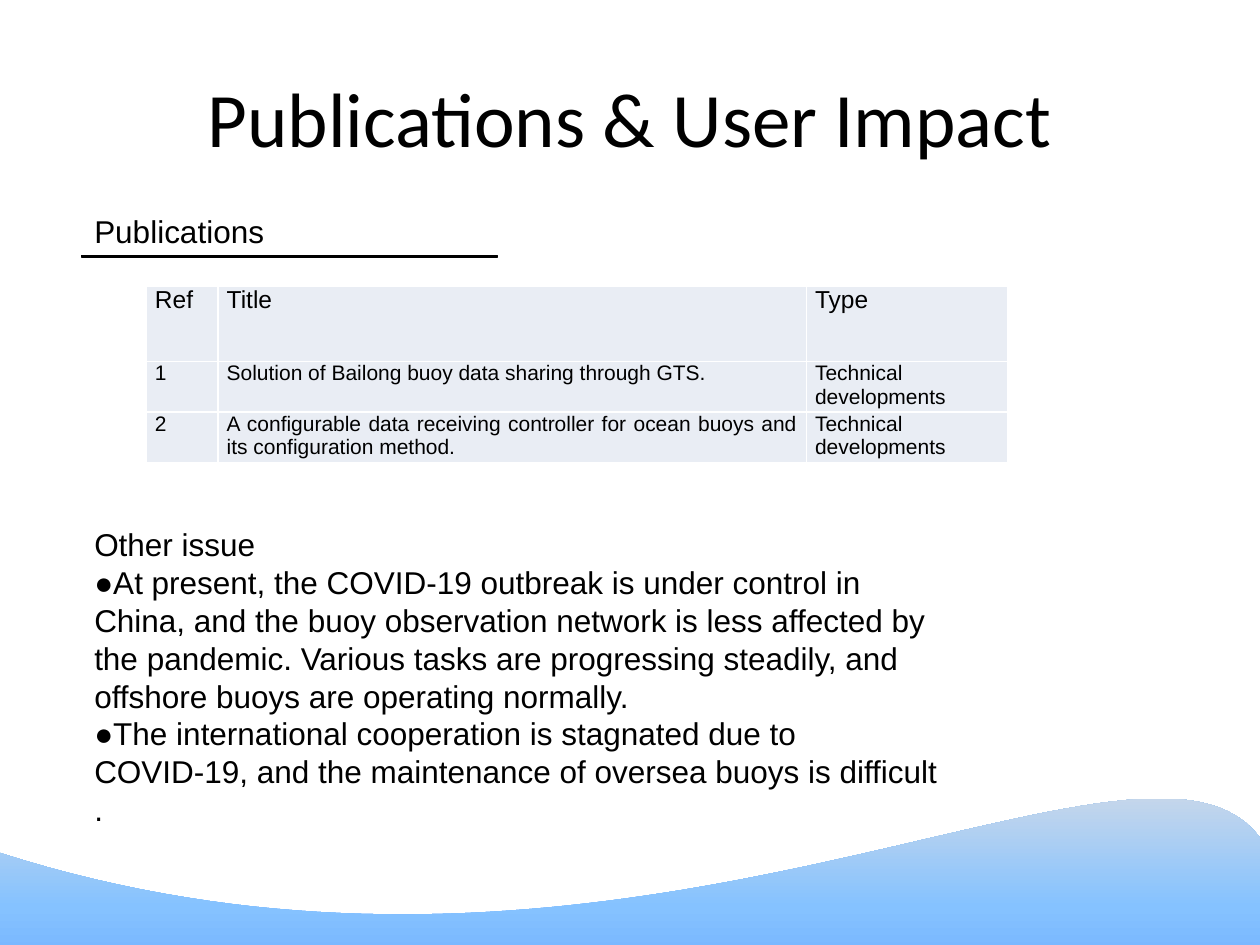
from copy import deepcopy

from lxml.etree import SubElement
from pptx import Presentation
from pptx.dml.color import RGBColor
from pptx.enum.shapes import MSO_SHAPE as Shape
from pptx.enum.text import MSO_ANCHOR as Anchor, PP_ALIGN as Align
from pptx.oxml.ns import qn
from pptx.util import Inches, Pt

BLACK = RGBColor(0x00, 0x00, 0x00)
WHITE = RGBColor(0xFF, 0xFF, 0xFF)
CELL_FILL = RGBColor(0xE9, 0xED, 0xF4)
WAVE_STOPS = [
    (0, RGBColor(0x7A, 0xB8, 0xFF)),
    (0.28, RGBColor(0x85, 0xC2, 0xFF)),
    (1, RGBColor(0xC4, 0xD6, 0xEB)),
]
WAVE_CURVE = [(0, 6.77), (5.01, 8.37), (9.09, 5.41), (10, 6.65)]
WAVE_BOTTOM = 7.53
WAVE_STEPS = 80

COLUMN_WIDTHS = [0.57, 4.67, 1.6]
ROW_HEIGHTS = [0.6, 0.37, 0.37]
PUBLICATIONS = [
    ("Ref", "Title", "Type"),
    ("1", "Solution of Bailong buoy data sharing through GTS.", "Technical developments"),
    ("2", "A configurable data receiving controller for ocean buoys and its "
          "configuration method.", "Technical developments"),
]
OTHER_ISSUE = [
    "Other issue",
    "●At present, the COVID-19 outbreak is under control in China, and the buoy "
    "observation network is less affected by the pandemic. Various tasks are "
    "progressing steadily, and offshore buoys are operating normally.",
    "●The international cooperation is stagnated due to COVID-19, and the "
    "maintenance of oversea buoys is difficult",
    ".",
]


def style_paragraph(paragraph, size, name="Arial", align=Align.LEFT):
    """Set the font and alignment of a paragraph."""
    paragraph.alignment = align
    paragraph.font.size = Pt(size)
    paragraph.font.name = name
    paragraph.font.color.rgb = BLACK


def add_text(slide, box, lines, size, name="Arial", align=Align.LEFT,
             anchor=Anchor.TOP, wrap=True):
    """Add a text box with one paragraph for each line."""
    frame = slide.shapes.add_textbox(*map(Inches, box)).text_frame
    frame.word_wrap = wrap
    frame.vertical_anchor = anchor
    frame.text = "\n".join(lines)
    for paragraph in frame.paragraphs:
        style_paragraph(paragraph, size, name, align)


def bezier_point(t, points):
    """Return the point at t on a cubic curve."""
    weights = [(1 - t) ** 3, 3 * t * (1 - t) ** 2, 3 * t ** 2 * (1 - t), t ** 3]
    return tuple(
        Inches(sum(weight * point[axis] for weight, point in zip(weights, points)))
        for axis in (0, 1)
    )


def add_wave(slide):
    """Add the gradient wave along the foot of the slide."""
    curve = [bezier_point(step / WAVE_STEPS, WAVE_CURVE) for step in range(WAVE_STEPS + 1)]
    corners = [(Inches(10), Inches(WAVE_BOTTOM)), (0, Inches(WAVE_BOTTOM))]
    builder = slide.shapes.build_freeform(*curve[0])
    builder.add_line_segments(curve[1:] + corners, close=True)
    shape = builder.convert_to_shape()
    shape.shadow.inherit = False
    shape.line.fill.background()
    shape.fill.gradient()
    shape.fill.gradient_angle = 90
    stop_list = shape._element.spPr.find(".//" + qn("a:gsLst"))
    stop_list.append(deepcopy(stop_list[0]))
    for stop, (position, color) in zip(shape.fill.gradient_stops, WAVE_STOPS):
        stop.position = position
        stop.color.rgb = color


def add_rule(slide, box):
    """Add a thin black bar under a heading."""
    shape = slide.shapes.add_shape(Shape.RECTANGLE, *map(Inches, box))
    shape.shadow.inherit = False
    shape.fill.solid()
    shape.fill.fore_color.rgb = BLACK
    shape.line.color.rgb = BLACK
    shape.line.width = Pt(0.75)


def add_borders(cell):
    """Draw white lines on all sides of a cell."""
    properties = cell._tc.get_or_add_tcPr()
    for index, side in enumerate(("lnL", "lnR", "lnT", "lnB")):
        line = SubElement(properties, qn("a:" + side), w=str(Pt(1)))
        fill = SubElement(line, qn("a:solidFill"))
        SubElement(fill, qn("a:srgbClr"), val=str(WHITE))
        properties.insert(index, line)


def fill_cell(cell, text, size):
    """Write and style one table cell."""
    cell.margin_left = cell.margin_right = Inches(0.07)
    cell.margin_top = cell.margin_bottom = 0
    cell.fill.solid()
    cell.fill.fore_color.rgb = CELL_FILL
    add_borders(cell)
    cell.text = text
    style_paragraph(cell.text_frame.paragraphs[0], size, align=Align.JUSTIFY)


def add_publications(slide, left, top):
    """Add the table of publications."""
    table = slide.shapes.add_table(
        len(ROW_HEIGHTS), len(COLUMN_WIDTHS), Inches(left), Inches(top),
        Inches(sum(COLUMN_WIDTHS)), Inches(sum(ROW_HEIGHTS))).table
    for column, width in zip(table.columns, COLUMN_WIDTHS):
        column.width = Inches(width)
    for row, height, texts in zip(table.rows, ROW_HEIGHTS, PUBLICATIONS):
        row.height = Inches(height)
        size = 14 if texts is PUBLICATIONS[0] else 12
        for cell, text in zip(row.cells, texts):
            fill_cell(cell, text, size)


def main():
    """Build and save the slide."""
    presentation = Presentation()
    presentation.slide_width = Inches(10)
    presentation.slide_height = Inches(7.5)
    slide = presentation.slides.add_slide(presentation.slide_layouts[6])
    slide.background.fill.solid()
    slide.background.fill.fore_color.rgb = WHITE
    add_wave(slide)
    add_text(slide, (0.5, 0.3, 9, 1.25), ["Publications & User Impact"], 44,
             "Calibri", Align.CENTER, Anchor.MIDDLE)
    add_publications(slide, 1.16, 2.27)
    add_rule(slide, (0.65, 2.03, 3.3, 0.01))
    add_text(slide, (0.65, 4.12, 6.96, 2.52), OTHER_ISSUE, 18)
    add_text(slide, (0.65, 1.63, 1.56, 0.4), ["Publications"], 18, wrap=False)
    presentation.save("out.pptx")


if __name__ == "__main__":
    main()
